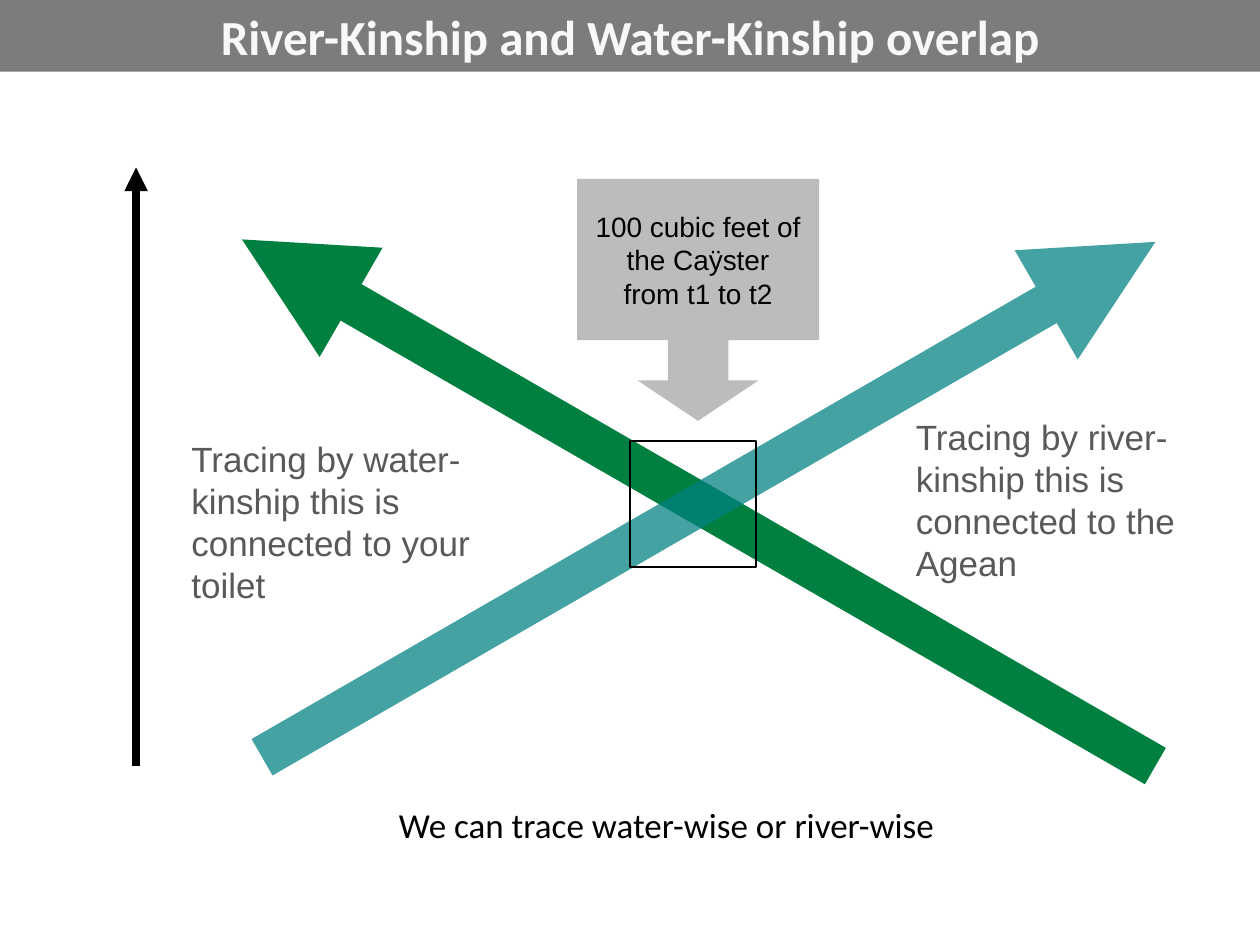
from pptx import Presentation
from pptx.dml.color import RGBColor
from pptx.enum.shapes import MSO_CONNECTOR as Connector, MSO_SHAPE as Shape
from pptx.enum.text import MSO_ANCHOR as Anchor, PP_ALIGN as Align
from pptx.oxml.ns import qn
from pptx.util import Inches, Pt
from lxml.etree import SubElement

BLACK = RGBColor(0x00, 0x00, 0x00)
WHITE = RGBColor(0xF8, 0xF8, 0xF8)
BANNER_GRAY = RGBColor(0x7C, 0x7C, 0x7C)
CALLOUT_GRAY = RGBColor(0xBC, 0xBC, 0xBC)
NOTE_GRAY = RGBColor(0x59, 0x59, 0x59)
WATER_GREEN = RGBColor(0x00, 0x80, 0x40)
RIVER_TEAL = RGBColor(0x00, 0x80, 0x80)


class Diagram:
    heading_font = "Calibri"
    label_font = "Arial"

    def __init__(self, slide):
        self.shapes = slide.shapes

    def set_text(self, frame, text, font, size, color, align=Align.LEFT, bold=False):
        frame.text = text
        for paragraph in frame.paragraphs:
            paragraph.alignment = align
            for run in paragraph.runs:
                run.font.name = font
                run.font.size = Pt(size)
                run.font.bold = bold
                run.font.color.rgb = color

    def block(self, preset, left, top, width, height, fill=None, outline=None):
        block = self.shapes.add_shape(
            preset, Inches(left), Inches(top), Inches(width), Inches(height))
        block.shadow.inherit = False
        if fill is None:
            block.fill.background()
        else:
            block.fill.solid()
            block.fill.fore_color.rgb = fill
        if outline is None:
            block.line.fill.background()
        else:
            block.line.color.rgb = outline
            block.line.width = Pt(0.75)
        block.text_frame.vertical_anchor = Anchor.MIDDLE
        return block

    def label(self, text, left, top, width, height, font, color, align=Align.LEFT):
        box = self.shapes.add_textbox(
            Inches(left), Inches(top), Inches(width), Inches(height))
        box.text_frame.word_wrap = True
        self.set_text(box.text_frame, text, font, 20, color, align)
        return box

    def arrow(self, start, end, color, width, opacity=100):
        arrow = self.shapes.add_connector(
            Connector.STRAIGHT, *map(Inches, start + end))
        arrow.line.color.rgb = color
        arrow.line.width = Pt(width)
        properties = arrow._element.spPr
        outline = properties.find(qn("a:ln"))
        if opacity < 100:
            tint = outline.find(qn("a:solidFill"))[0]
            SubElement(tint, qn("a:alpha"), val=str(opacity * 1000))
        SubElement(outline, qn("a:tailEnd"), type="triangle")
        SubElement(properties, qn("a:effectLst"))


def main():
    deck = Presentation()
    deck.slide_width, deck.slide_height = Inches(10), Inches(7.5)
    diagram = Diagram(deck.slides.add_slide(deck.slide_layouts[6]))

    banner = diagram.block(Shape.RECTANGLE, 0, 0, 10, 0.57, BANNER_GRAY)
    diagram.set_text(banner.text_frame, "River-Kinship and Water-Kinship overlap",
                     diagram.heading_font, 28, WHITE, Align.CENTER, bold=True)

    summary = diagram.label("We can trace water-wise or river-wise", 1.5, 6.33, 7.58, 0.92,
                            diagram.heading_font, BLACK, Align.CENTER)
    summary.text_frame.paragraphs[0].space_before = Pt(4)

    diagram.arrow((1.08, 6.08), (1.08, 1.33), BLACK, 4.5)
    diagram.arrow((9.17, 6.08), (1.92, 1.9), WATER_GREEN, 24)
    diagram.arrow((2.08, 6.01), (9.17, 1.92), RIVER_TEAL, 24, opacity=72)
    diagram.block(Shape.RECTANGLE, 5, 3.5, 1, 1, outline=BLACK)

    for kinship, goal, left, top in (("river", "the Agean", 7.17, 3.25),
                                     ("water", "your toilet", 1.42, 3.42)):
        diagram.label(f"Tracing by {kinship}-\vkinship this is\vconnected to {goal}",
                      left, top, 2.58, 1.45, diagram.label_font, NOTE_GRAY)

    callout = diagram.block(Shape.DOWN_ARROW_CALLOUT, 4.58, 1.42, 1.92, 1.92, CALLOUT_GRAY)
    for index, ratio in enumerate((0.25, 0.25, 0.167, 0.667)):
        callout.adjustments[index] = ratio
    callout.text_frame.word_wrap = False
    diagram.set_text(callout.text_frame, "100 cubic feet of\nthe Caÿster\nfrom t1 to t2",
                     diagram.label_font, 16, BLACK, Align.CENTER)

    deck.save("out.pptx")


if __name__ == "__main__":
    main()
